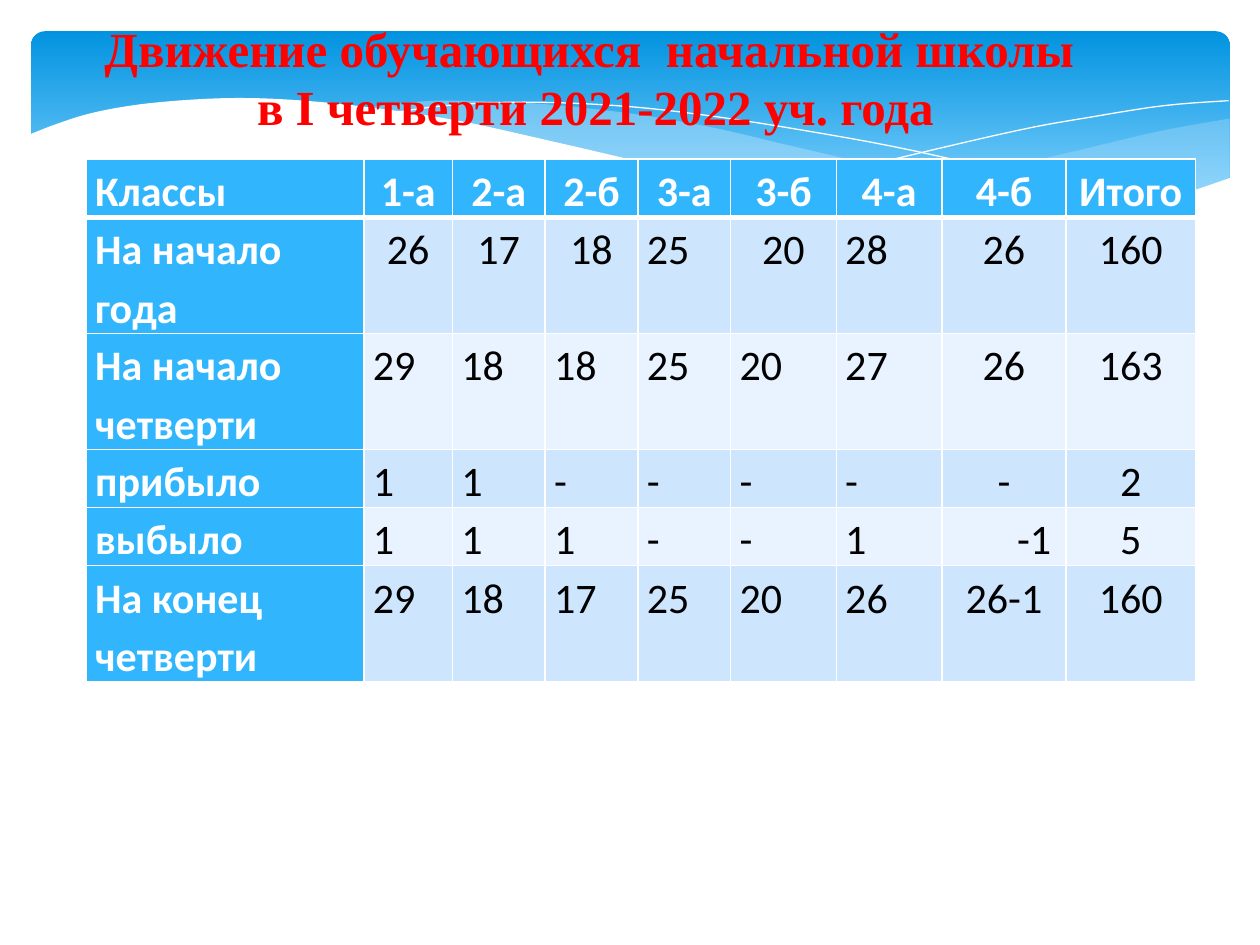
"""Build the slide on pupil movement in the first quarter."""
from lxml import etree
from pptx import Presentation
from pptx.dml.color import RGBColor
from pptx.enum.shapes import MSO_SHAPE as SHAPE
from pptx.enum.text import MSO_ANCHOR as ANCHOR, PP_ALIGN as ALIGN
from pptx.oxml.ns import qn
from pptx.util import Cm, Pt

WHITE, BLACK, RED = "FFFFFF", "000000", "FF0000"
SKY_TOP, SKY_BOTTOM, WAVE = "0293E0", "83D3FE", "C6E7FC"
HEADING, ODD_ROW, EVEN_ROW = "31B6FD", "CEE5FE", "E8F3FF"
STEPS = 5


def rgb(value):
    return RGBColor.from_string(value)


def smooth(knots):
    """Return Catmull-Rom points in EMU through knots given in centimetres."""
    padded = [knots[0], *knots, knots[-1]]
    points = []
    for segment in zip(padded, padded[1:], padded[2:], padded[3:]):
        for step in range(STEPS):
            t = step / STEPS
            points.append(tuple(
                Cm(b + t * (c - a) / 2 + t**2 * (2 * a - 5 * b + 4 * c - d) / 2
                   + t**3 * (3 * b - a - 3 * c + d) / 2)
                for a, b, c, d in zip(*segment)))
    return points + [(Cm(knots[-1][0]), Cm(knots[-1][1]))]


prs = Presentation()
prs.slide_width, prs.slide_height = Cm(25.4), Cm(19.05)
s = prs.slides.add_slide(prs.slide_layouts[6])

sky = s.shapes.add_shape(SHAPE.ROUNDED_RECTANGLE, Cm(0.63), Cm(0.63), Cm(24.16), Cm(3.96))
sky.adjustments[0] = 0.07
sky.shadow.inherit = False
sky.line.fill.background()
sky.fill.gradient()
sky.fill.gradient_angle = 270
for stop, position, color in zip(sky.fill.gradient_stops, (0, 0.9), (SKY_TOP, SKY_BOTTOM)):
    stop.position = position
    stop.color.rgb = rgb(color)

right_top = [(24.79, 2.39), (23.39, 2.64), (21.87, 3), (20.45, 3.33), (19.13, 3.63),
             (17.93, 3.86), (16.79, 4.06)]
right_bottom = [(16.79, 4.06), (18.26, 4.24), (19.53, 4.34), (21.21, 4.37), (22.58, 4.22),
                (23.75, 3.96), (24.79, 3.58)]
middle_top = [(22.68, 4.24), (21.26, 4.04), (19.69, 3.78), (17.93, 3.4), (15.98, 2.95),
              (14.45, 2.59), (13.06, 2.34), (11.81, 2.18), (10.67, 2.08), (9.17, 2.03),
              (8.33, 2.06), (7.26, 2.18)]
middle_bottom = [(7.26, 2.18), (9.19, 2.46), (11.4, 2.95), (13.46, 3.43), (15.27, 3.81),
                 (16.89, 4.09), (18.34, 4.27), (19.63, 4.37), (21.03, 4.39), (22.25, 4.29),
                 (22.68, 4.24)]
falling_line = [(7.85, 2.29), (8.97, 2.13), (10.57, 2.06), (12.42, 2.13), (14.12, 2.31),
                (16.15, 2.62), (18.47, 3.05), (21.11, 3.68), (23.04, 4.22)]
rising_line = [(15.57, 3.84), (17.65, 3.3), (20.47, 2.64), (22, 2.36), (23.47, 2.13),
               (24.77, 2.03)]
page_top = [(24.82, 3.58), (23.37, 4.04), (21.59, 4.32), (20.14, 4.34), (18.44, 4.24),
            (16.46, 3.96), (14.1, 3.53), (11.35, 2.9), (9.27, 2.44), (7.42, 2.16),
            (5.84, 2.01), (4.5, 1.98), (3.02, 2.08), (1.93, 2.26), (1.17, 2.49), (0.58, 2.72)]
page_bottom = [(0.58, 5.69), (24.82, 5.69)]

for edges, color, opacity in (
        ([right_top, right_bottom], WAVE, 29),
        ([middle_top, middle_bottom], WAVE, 40),
        ([falling_line], None, 100),
        ([rising_line], None, 100),
        ([page_top, page_bottom], WHITE, 100)):
    points = [point for edge in edges for point in smooth(edge)]
    builder = s.shapes.build_freeform(*points[0])
    builder.add_line_segments(points[1:], close=color is not None)
    sp = builder.convert_to_shape()
    sp.shadow.inherit = False
    if color:
        sp.line.fill.background()
        sp.fill.solid()
        sp.fill.fore_color.rgb = rgb(color)
        solid = sp.element.spPr.find(qn("a:solidFill"))
        etree.SubElement(solid[0], qn("a:alpha"), val=str(opacity * 1000))
    else:
        sp.fill.background()
        sp.line.color.rgb = rgb(WHITE)
        sp.line.width = Pt(0)

tf = s.shapes.add_textbox(Cm(1.75), Cm(0.23), Cm(20.5), Cm(2.64)).text_frame
tf.word_wrap = True
tf.margin_left = tf.margin_right = 0
tf.vertical_anchor = ANCHOR.MIDDLE
tf.text = "Движение обучающихся  начальной школы \nв I четверти 2021-2022 уч. года"
for p in tf.paragraphs:
    p.alignment = ALIGN.CENTER
    font = p.runs[0].font
    font.name, font.size, font.bold = "Times New Roman", Pt(28), True
    font.color.rgb = rgb(RED)

rows = [
    ["Классы", "1-а", "2-а", "2-б", "3-а", "3-б", "4-а", "4-б", "Итого"],
    ["На начало года", "26", "17", "18", "25", "20", "28", "26", "160"],
    ["На начало четверти", "29", "18", "18", "25", "20", "27", "26", "163"],
    ["прибыло", "1", "1", "-", "-", "-", "-", "-", "2"],
    ["выбыло", "1", "1", "1", "-", "-", "1", "-1", "5"],
    ["На конец четверти", "29", "18", "17", "25", "20", "26", "26-1", "160"]]
line_height = 1.17
heights = [line_height * (2 if row[0].startswith("На ") else 1) for row in rows]
widths = [5.6, 1.78, 1.87, 1.87, 1.87, 2.13, 2.13, 2.5, 2.61]
last_columns = {7, 8}
centred_columns = {0: set(range(1, 9)), 1: {1, 2, 3, 5} | last_columns}

table = s.shapes.add_table(len(rows), len(widths), Cm(1.74), Cm(3.21),
                           Cm(sum(widths)), Cm(sum(heights))).table
for column, width in zip(table.columns, widths):
    column.width = Cm(width)
for row, height in zip(table.rows, heights):
    row.height = Cm(height)

for i, row in enumerate(rows):
    for j, text in enumerate(row):
        cell = table.cell(i, j)
        is_heading = i == 0 or j == 0
        cell.margin_left = cell.margin_right = Cm(0.18)
        cell.margin_top = cell.margin_bottom = 0
        cell.text_frame.text = text
        p = cell.text_frame.paragraphs[0]
        p.line_spacing = 1.15
        if text == "-1":
            p.alignment = ALIGN.RIGHT
            cell.margin_right = Cm(0.3)
        elif j in centred_columns.get(i, last_columns):
            p.alignment = ALIGN.CENTER
        font = p.runs[0].font
        font.name, font.size, font.bold = "Calibri", Pt(24), is_heading
        font.color.rgb = rgb(WHITE if is_heading else BLACK)
        tc_pr = cell._tc.get_or_add_tcPr()
        for side in "LRTB":
            under_header = (i, side) in ((0, "B"), (1, "T"))
            ln = etree.SubElement(tc_pr, qn(f"a:ln{side}"), w=str(Pt(3 if under_header else 1)))
            solid = etree.SubElement(ln, qn("a:solidFill"))
            etree.SubElement(solid, qn("a:srgbClr"), val=WHITE)
        cell.fill.solid()
        cell.fill.fore_color.rgb = rgb(HEADING if is_heading else ODD_ROW if i % 2 else EVEN_ROW)

prs.save("out.pptx")
